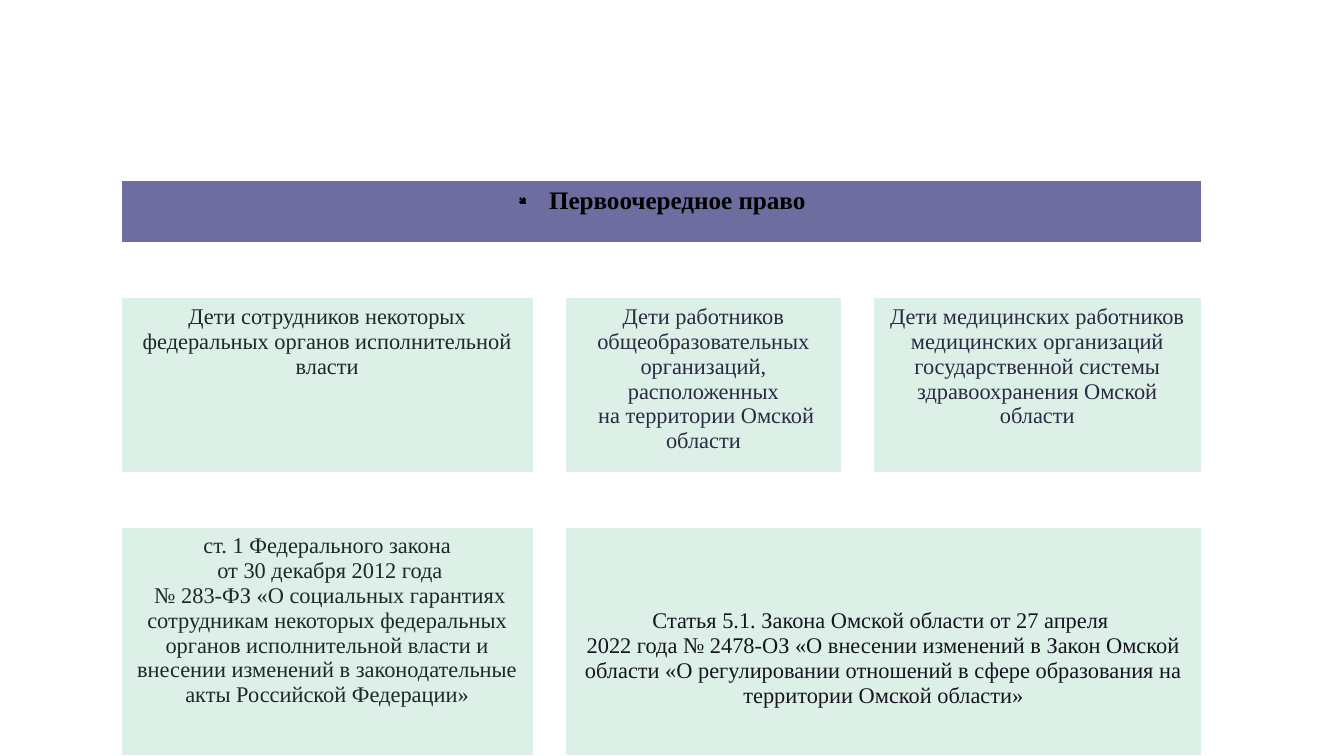
from lxml.etree import SubElement
from pptx import Presentation
from pptx.dml.color import RGBColor
from pptx.enum.text import PP_ALIGN
from pptx.oxml.ns import qn
from pptx.util import Inches, Pt

WHITE = RGBColor(0xFF, 0xFF, 0xFF)
BLACK = RGBColor(0x00, 0x00, 0x00)
PURPLE = RGBColor(0x6D, 0x6D, 0x9F)
MINT = RGBColor(0xDC, 0xF0, 0xE8)
DARK_GREEN = RGBColor(0x1E, 0x28, 0x25)
DARK_VIOLET = RGBColor(0x2A, 0x2A, 0x40)
NEAR_BLACK = RGBColor(0x15, 0x15, 0x20)

FONT = "Times New Roman"
SLIDE_WIDTH = 10
COLUMNS = [3.07, 0.24, 2.05, 0.24, 2.44]
ROWS = [0.47, 0.4, 1.3, 0.29, 1.7]

GROUPS = [
    (0, "Дети сотрудников некоторых федеральных органов исполнительной власти", DARK_GREEN),
    (2, "Дети работников общеобразовательных организаций, расположенных\v"
        " на территории Омской области", DARK_VIOLET),
    (4, "Дети медицинских работников медицинских организаций государственной "
        "системы здравоохранения Омской области", DARK_VIOLET),
]
FEDERAL_LAW = (
    "ст. 1 Федерального закона\v от 30 декабря 2012 года\v № 283-ФЗ «О социальных "
    "гарантиях сотрудникам некоторых федеральных органов исполнительной власти и "
    "внесении изменений в законодательные акты Российской Федерации»"
)
REGIONAL_LAW = (
    "Статья 5.1. Закона Омской области от 27 апреля \v2022 года № 2478-ОЗ «О внесении "
    "изменений в Закон Омской области «О регулировании отношений в сфере образования "
    "на территории Омской области»"
)


def add_border(cell, bottom_width):
    properties = cell._tc.get_or_add_tcPr()
    sides = [("a:lnL", 0.45), ("a:lnR", 0.45), ("a:lnT", 0.45), ("a:lnB", bottom_width)]
    for position, (side, width) in enumerate(sides):
        line = SubElement(properties, qn(side), w=str(Pt(width)))
        fill = SubElement(line, qn("a:solidFill"))
        SubElement(fill, qn("a:srgbClr"), val=str(WHITE))
        properties.insert(position, line)


def fill_cell(cell, text, text_color, background=MINT, size=12, bold=False):
    cell.fill.solid()
    cell.fill.fore_color.rgb = background
    paragraph = cell.text_frame.paragraphs[0]
    paragraph.text = text
    paragraph.alignment = PP_ALIGN.CENTER
    for run in paragraph.runs:
        run.font.name = FONT
        run.font.size = Pt(size)
        run.font.bold = bold
        run.font.color.rgb = text_color
    for line_break in paragraph._p.findall(qn("a:br")):
        SubElement(line_break, qn("a:rPr"), sz=str(size * 100))
    return paragraph


def add_bullet(paragraph):
    properties = paragraph._p.get_or_add_pPr()
    properties.set("marL", str(Inches(0.24)))
    properties.set("indent", str(Inches(-0.23)))
    color = SubElement(properties, qn("a:buClr"))
    SubElement(color, qn("a:srgbClr"), val=str(BLACK))
    SubElement(properties, qn("a:buSzPct"), val="45000")
    SubElement(properties, qn("a:buFont"), typeface="Wingdings", charset="2")
    SubElement(properties, qn("a:buChar"), char="●")


def add_rights_table(slide, left, top):
    table = slide.shapes.add_table(
        len(ROWS), len(COLUMNS), Inches(left), Inches(top),
        Inches(sum(COLUMNS)), Inches(sum(ROWS)),
    ).table
    table.first_row = False
    table.horz_banding = False
    for column, width in zip(table.columns, COLUMNS):
        column.width = Inches(width)
    for row, height in zip(table.rows, ROWS):
        row.height = Inches(height)
    for cell in table.iter_cells():
        cell.fill.background()

    heading = table.cell(0, 0)
    heading.merge(table.cell(0, 4))
    add_bullet(fill_cell(heading, "Первоочередное право", BLACK, PURPLE, 13.5, True))

    for column, group, color in GROUPS:
        fill_cell(table.cell(2, column), group, color)

    fill_cell(table.cell(4, 0), FEDERAL_LAW, DARK_GREEN)
    regional = table.cell(4, 2)
    regional.merge(table.cell(4, 4))
    regional.margin_top = Inches(0.61)
    fill_cell(regional, REGIONAL_LAW, NEAR_BLACK)

    for index, cell in enumerate(table.iter_cells()):
        add_border(cell, 1.47 if index < len(COLUMNS) else 0.45)


def main():
    presentation = Presentation()
    presentation.slide_width = Inches(SLIDE_WIDTH)
    presentation.slide_height = Inches(SLIDE_WIDTH * 9 / 16)
    slide = presentation.slides.add_slide(presentation.slide_layouts[6])
    add_rights_table(slide, 0.9, 1.34)
    presentation.save("out.pptx")


if __name__ == "__main__":
    main()
